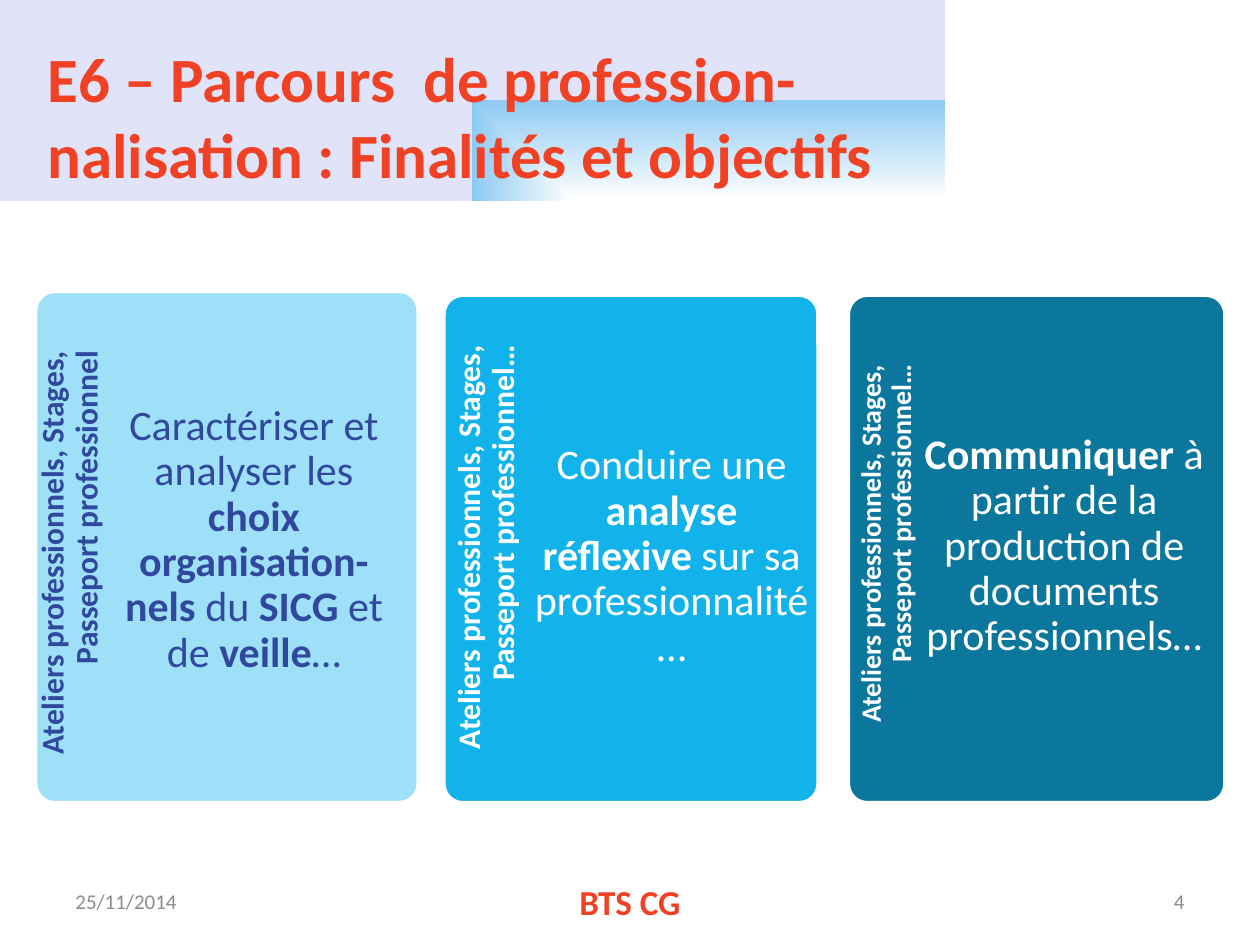
from dataclasses import dataclass
from pptx import Presentation
from pptx.dml.color import RGBColor as Rgb
from pptx.enum.shapes import MSO_SHAPE as Preset
from pptx.enum.text import MSO_ANCHOR as Anchor, MSO_AUTO_SIZE as AutoSize, PP_ALIGN as Align
from pptx.oxml import parse_xml
from pptx.oxml.ns import nsdecls
from pptx.util import Pt


@dataclass(frozen=True)
class Theme:
    face: str = "Calibri"
    accent: str = "F14124"
    muted: str = "8C8C8C"
    navy: str = "31489F"
    white: str = "FFFFFF"
    pale: str = "9EE0F8"
    sky: str = "12B2EB"
    teal: str = "0C779D"
    banner: tuple = ((0, "FFFFFF"), (100, "8FCAF3"), (100, "C1C7F2"), (100, "E1E3F8"))
    title_size: int = 36
    goal_size: int = 24
    footer_size: int = 20
    label_size: int = 18
    small_label_size: int = 16
    note_size: int = 12


def assign(target, values):
    for attribute, value in values.items():
        setattr(target, attribute, value)


def write(frame, runs, size, colour, align, margins=(7.2, 3.6, 7.2, 3.6),
          anchor=Anchor.MIDDLE, spacing=1.0):
    left, top, right, bottom = map(Pt, margins)
    assign(frame, dict(word_wrap=True, auto_size=AutoSize.NONE, vertical_anchor=anchor,
                       margin_left=left, margin_top=top,
                       margin_right=right, margin_bottom=bottom))
    paragraph = frame.paragraphs[0]
    assign(paragraph, dict(alignment=align, line_spacing=spacing, space_before=Pt(0)))
    for words, bold in runs:
        for index, line in enumerate(words.split("\n")):
            if index:
                paragraph.add_line_break()
            run = paragraph.add_run()
            run.text = line
            assign(run.font, dict(name=theme.face, size=Pt(size), bold=bold))
            run.font.color.rgb = Rgb.from_string(colour)


theme = Theme()
deck = Presentation()
assign(deck, dict(slide_width=Pt(720), slide_height=Pt(540)))
slide = deck.slides.add_slide(deck.slide_layouts[5])
shapes = slide.shapes

banner = shapes.add_shape(Preset.RECTANGLE, Pt(0), Pt(0), Pt(540), Pt(114.75))
banner.shadow.inherit = False
banner.line.fill.background()
stops = "".join(f'<a:gs pos="{position * 1000}"><a:srgbClr val="{colour}"/></a:gs>'
                for position, colour in theme.banner)
gradient = parse_xml(
    f'<a:gradFill {nsdecls("a")} rotWithShape="1"><a:gsLst>{stops}</a:gsLst>'
    '<a:path path="rect"><a:fillToRect l="100000" t="100000"/></a:path></a:gradFill>')
banner._element.spPr.prstGeom.addnext(gradient)
shapes._spTree.insert(2, banner._element)

title = shapes.title
assign(title, dict(left=Pt(20), top=Pt(21), width=Pt(648), height=Pt(90)))
write(title.text_frame,
      [("E6 – Parcours  de profession-\nnalisation : Finalités et objectifs", True)],
      theme.title_size, theme.accent, Align.LEFT)

footers = [
    (36, 168, "25/11/2014", theme.note_size, theme.muted, False, Align.LEFT),
    (246, 228, "BTS CG", theme.footer_size, theme.accent, True, Align.CENTER),
    (516, 168, "4", theme.note_size, theme.muted, False, Align.RIGHT),
]
for left, width, words, size, colour, bold, align in footers:
    footer = shapes.add_textbox(Pt(left), Pt(500.5), Pt(width), Pt(28.75))
    write(footer.text_frame, [(words, bold)], size, colour, align)

activities = "Ateliers professionnels, Stages, Passeport professionnel"
cards = [
    dict(fill=theme.pale, ink=theme.navy, card=(20.4, 166.5, 218.6, 292.2),
         label=(-82.1, 292.3, 239.8, 43.9), label_size=theme.label_size, label_text=activities,
         goal=(63.4, 193, 163.4, 292.2), inset=38,
         runs=[("Caractériser et analyser les ", False), ("choix organisation-nels ", True),
               ("du ", False), ("SICG", True), (" et de ", False), ("veille", True),
               ("…", False)]),
    dict(fill=theme.sky, ink=theme.white, card=(253.7, 168.7, 213.8, 290),
         label=(156.2, 288.7, 237.6, 42.5), label_size=theme.label_size,
         label_text=activities + "…", goal=(304.6, 212.4, 158.4, 290), inset=41,
         runs=[("Conduire une ", False), ("analyse réflexive ", True),
               ("sur sa professionnalité…", False)]),
    dict(fill=theme.teal, ink=theme.white, card=(484.8, 168.7, 215.2, 290),
         label=(387.4, 299.5, 237.6, 43.2), label_size=theme.small_label_size,
         label_text=activities + "…", goal=(527.8, 206.6, 160.6, 290), inset=41,
         runs=[("Communiquer", True),
               (" à partir de la production de documents professionnels…", False)]),
]
for part in cards:
    card = shapes.add_shape(Preset.ROUNDED_RECTANGLE, *map(Pt, part["card"]))
    card.shadow.inherit = False
    card.adjustments[0] = 0.05
    card.fill.solid()
    card.fill.fore_color.rgb = Rgb.from_string(part["fill"])
    card.line.color.rgb = Rgb.from_string(theme.white)
    card.line.width = Pt(2)

    label = shapes.add_textbox(*map(Pt, part["label"]))
    label.rotation = 270
    write(label.text_frame, [(part["label_text"], True)], part["label_size"], part["ink"],
          Align.RIGHT, (0, 5, 6.3, 0), Anchor.TOP, 0.9)

    goal = shapes.add_textbox(*map(Pt, part["goal"]))
    write(goal.text_frame, part["runs"], theme.goal_size, part["ink"],
          Align.CENTER, (0, part["inset"], 0, 0), Anchor.TOP, 0.9)

deck.save("out.pptx")
